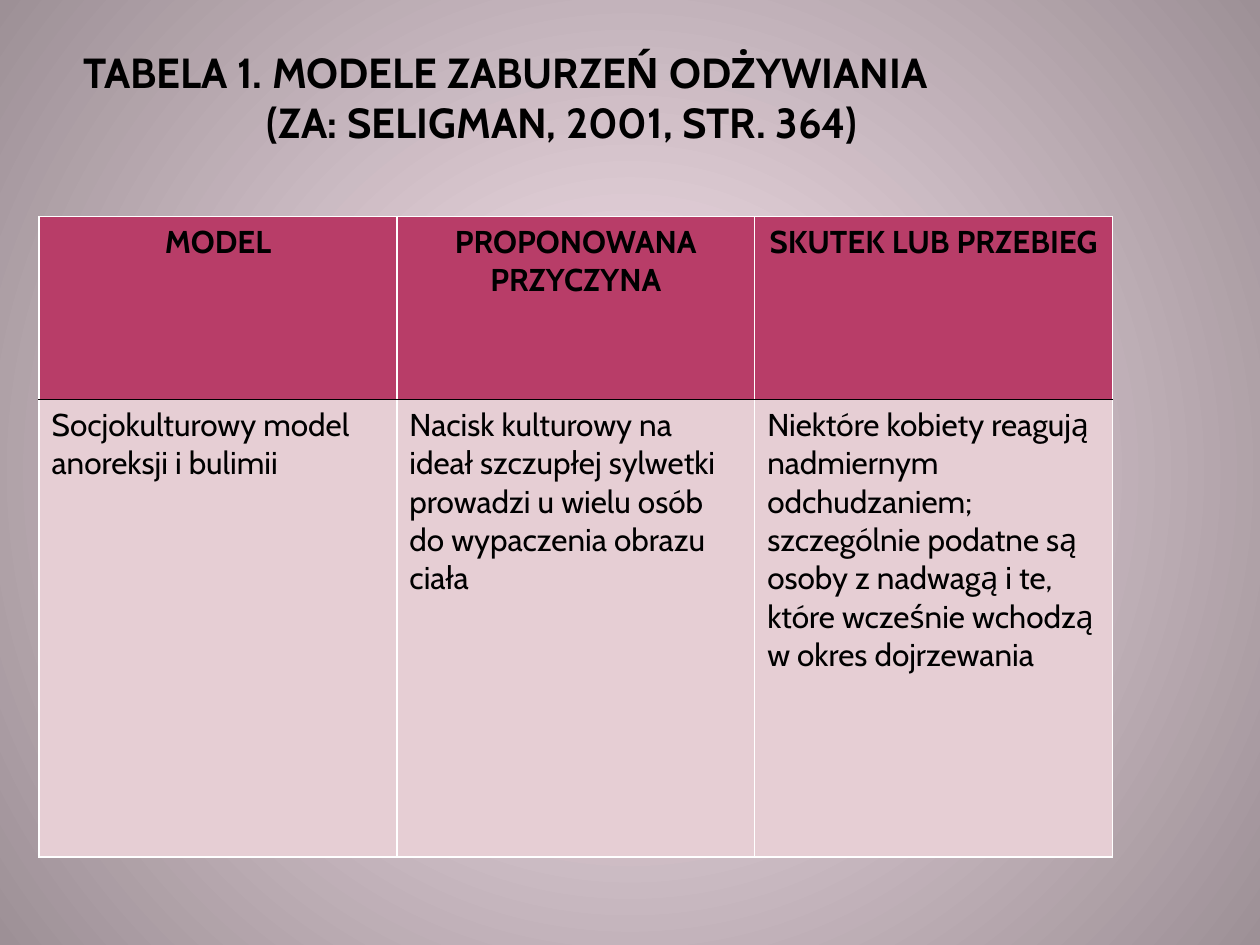
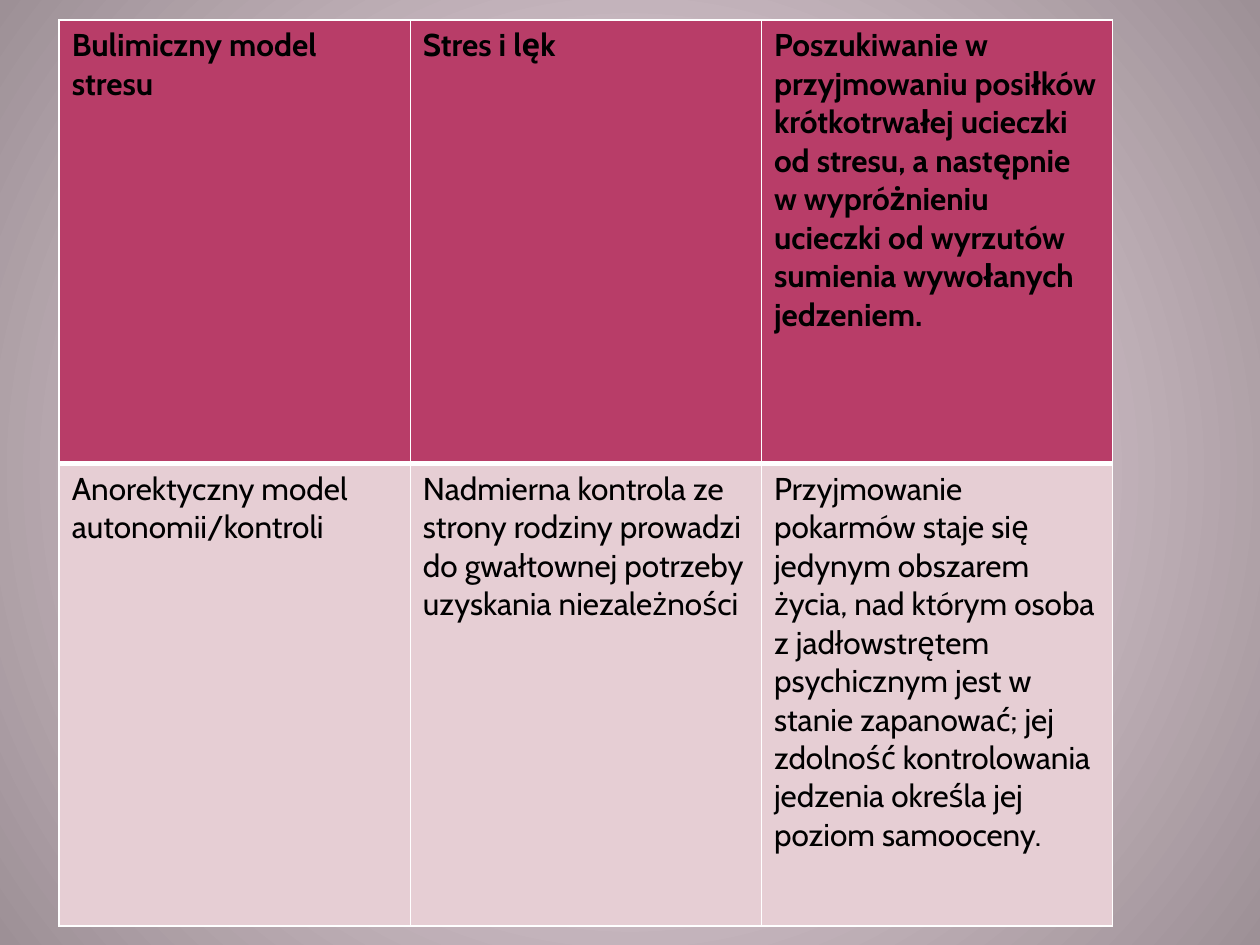
import pptx
import pptx.dml.color
import pptx.enum.text
import pptx.oxml
import pptx.oxml.ns
import pptx.util
from dataclasses import dataclass

Inches = pptx.util.Inches
Pt = pptx.util.Pt
Align = pptx.enum.text.PP_ALIGN
qn = pptx.oxml.ns.qn


@dataclass(frozen=True)
class Theme:
    font: str = "Cabin"
    title_size: int = 24
    body_size: int = 18
    text: str = "000000"
    header_fill: str = "B83D68"
    body_fill: str = "E6CED4"
    grid: str = "FFFFFF"
    center: str = "FCE7F1"
    edge: str = "9D9096"


THEME = Theme()

TITLE_LINES = [
    ("TABELA 1. MODELE ZABURZEŃ ODŻYWIANIA", Align.LEFT, 0.11),
    ("(ZA: SELIGMAN, 2001, STR. 364)", Align.CENTER, 0),
]

PAGES = [
    {
        "title": TITLE_LINES,
        "left": 0.31, "top": 1.72, "width": 8.52,
        "row_heights": [1.45, 3.63],
        "header_align": Align.CENTER,
        "divider": (THEME.text, 1),
        "rows": [
            ["MODEL", "PROPONOWANA PRZYCZYNA", "SKUTEK LUB PRZEBIEG"],
            [
                "Socjokulturowy model anoreksji i bulimii",
                "Nacisk kulturowy na ideał szczupłej sylwetki prowadzi u wielu osób "
                "do wypaczenia obrazu ciała",
                "Niektóre kobiety reagują nadmiernym odchudzaniem; szczególnie podatne "
                "są osoby z nadwagą i te, które wcześnie wchodzą w okres dojrzewania",
            ],
        ],
    },
    {
        "title": [],
        "left": 0.47, "top": 0.16, "width": 8.36,
        "row_heights": [3.52, 3.67],
        "header_align": Align.LEFT,
        "divider": (THEME.grid, 3),
        "rows": [
            [
                "Bulimiczny model stresu",
                "Stres i lęk",
                "Poszukiwanie w przyjmowaniu posiłków krótkotrwałej ucieczki od stresu, "
                "a następnie w wypróżnieniu ucieczki od wyrzutów sumienia wywołanych "
                "jedzeniem.",
            ],
            [
                "Anorektyczny model autonomii/kontroli",
                "Nadmierna kontrola ze strony rodziny prowadzi do gwałtownej potrzeby "
                "uzyskania niezależności",
                "Przyjmowanie pokarmów staje się jedynym obszarem życia, nad którym "
                "osoba z jadłowstrętem psychicznym jest w stanie zapanować; jej zdolność "
                "kontrolowania jedzenia określa jej poziom samooceny.",
            ],
        ],
    },
]


def rgb(value):
    return pptx.dml.color.RGBColor.from_string(value)


def style_paragraph(para, size, bold, align):
    para.alignment = align
    para.font.name = THEME.font
    para.font.size = Pt(size)
    para.font.bold = bold
    para.font.color.rgb = rgb(THEME.text)


def paint_background(page):
    fill = page.background.fill
    fill.gradient()
    for stop, color in zip(fill.gradient_stops, (THEME.center, THEME.edge)):
        stop.color.rgb = rgb(color)
    gradient = page.background._cSld.find(".//" + qn("a:gradFill"))
    gradient.remove(gradient.find(qn("a:lin")))
    gradient.append(pptx.oxml.parse_xml(
        f'<a:path {pptx.oxml.ns.nsdecls("a")} path="circle">'
        '<a:fillToRect l="50000" t="50000" r="50000" b="50000"/></a:path>'))


def add_title(page, lines):
    box = page.shapes.add_textbox(Inches(0.5), Inches(0.16), Inches(7.92), Inches(1.01))
    frame = box.text_frame
    frame.word_wrap = True
    frame.vertical_anchor = pptx.enum.text.MSO_ANCHOR.BOTTOM
    frame.margin_left = frame.margin_right = Inches(0.05)
    frame.margin_top = frame.margin_bottom = 0
    for index, (text, align, indent) in enumerate(lines):
        para = frame.add_paragraph() if index else frame.paragraphs[0]
        para.text = text
        style_paragraph(para, THEME.title_size, True, align)
        para._p.get_or_add_pPr().set("marL", str(Inches(indent)))


def set_borders(cell, borders):
    properties = cell._tc.get_or_add_tcPr()
    for index, (side, (color, width)) in enumerate(borders.items()):
        properties.insert(index, pptx.oxml.parse_xml(
            f'<a:ln{side} {pptx.oxml.ns.nsdecls("a")} w="{Pt(width)}">'
            f'<a:solidFill><a:srgbClr val="{color}"/></a:solidFill></a:ln{side}>'))


def add_models_table(page, content):
    rows = content["rows"]
    heights = content["row_heights"]
    table = page.shapes.add_table(
        len(rows), len(rows[0]), Inches(content["left"]), Inches(content["top"]),
        Inches(content["width"]), Inches(sum(heights))).table
    for column in table.columns:
        column.width = Inches(content["width"] / len(rows[0]))
    for row_index, (texts, height) in enumerate(zip(rows, heights)):
        header = row_index == 0
        table.rows[row_index].height = Inches(height)
        borders = dict.fromkeys("LRTB", (THEME.grid, 1))
        borders["B" if header else "T"] = content["divider"]
        for column_index, text in enumerate(texts):
            cell = table.cell(row_index, column_index)
            cell.text = text
            cell.fill.solid()
            cell.fill.fore_color.rgb = rgb(THEME.header_fill if header else THEME.body_fill)
            align = content["header_align"] if header else Align.LEFT
            style_paragraph(cell.text_frame.paragraphs[0], THEME.body_size, header, align)
            set_borders(cell, borders)


def main():
    deck = pptx.Presentation()
    deck.slide_width, deck.slide_height = Inches(10), Inches(7.5)
    for content in PAGES:
        page = deck.slides.add_slide(deck.slide_layouts[6])
        paint_background(page)
        if content["title"]:
            add_title(page, content["title"])
        add_models_table(page, content)
    deck.save("out.pptx")


if __name__ == "__main__":
    main()
